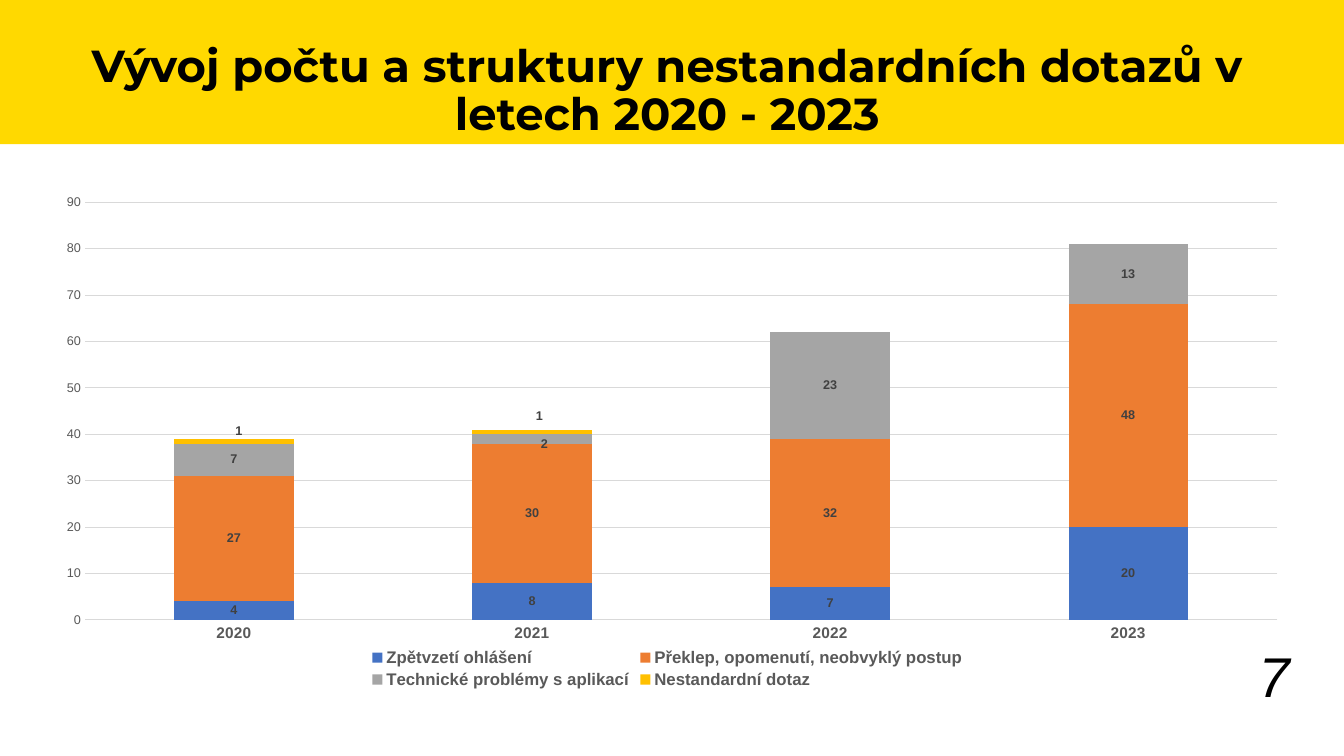
from dataclasses import dataclass

from lxml.etree import SubElement
from pptx import Presentation
from pptx.chart.data import CategoryChartData
from pptx.dml.color import RGBColor as Color
from pptx.enum.chart import XL_CHART_TYPE as ChartType
from pptx.enum.chart import XL_LEGEND_POSITION as LegendPosition
from pptx.enum.chart import XL_TICK_MARK as TickMark
from pptx.enum.shapes import MSO_SHAPE as ShapeKind
from pptx.enum.text import MSO_ANCHOR as Anchor
from pptx.enum.text import PP_ALIGN as Align
from pptx.oxml import parse_xml
from pptx.oxml.ns import nsdecls, qn
from pptx.util import Inches, Pt

WIDTH, HEIGHT = 13.33, 7.5
MARGIN = 0.46
CONTENT_WIDTH = WIDTH - 2 * MARGIN - 0.09


@dataclass(frozen=True)
class Theme:
    heading_font: str = "Montserrat"
    body_font: str = "Arial"
    black: str = "000000"
    band: str = "FFD900"
    axis_text: str = "595959"
    label_text: str = "404040"
    grid: str = "D9D9D9"
    title_size: int = 32
    number_size: int = 40
    legend_size: int = 12
    category_size: int = 11
    chart_size: int = 10
    label_size: int = 9


THEME = Theme()
YEARS = ["2020", "2021", "2022", "2023"]
QUERY_SERIES = [
    ("Zpětvzetí ohlášení", [4, 8, 7, 20], "4472C4"),
    ("Překlep, opomenutí, neobvyklý postup", [27, 30, 32, 48], "ED7D31"),
    ("Technické problémy s aplikací", [7, 2, 23, 13], "A5A5A5"),
    ("Nestandardní dotaz", [1, 1, None, None], "FFC000"),
]
# (series, year) -> label offset as shares of the chart's size
LABEL_SHIFTS = {(2, 1): (0.01, 0.01), (3, 0): (0.004, -0.02), (3, 1): (0.006, -0.03)}
PLOT_AREA = {"x": 0.031, "y": 0.033, "w": 0.96, "h": 0.824}


def style_font(font, size, color, bold=False, italic=False, name=THEME.body_font):
    font.name, font.size = name, Pt(size)
    font.bold, font.italic = bold, italic
    font.color.rgb = Color.from_string(color)


def add_band(slide, height):
    band = slide.shapes.add_shape(ShapeKind.RECTANGLE, 0, 0, Inches(WIDTH), Inches(height))
    band.shadow.inherit = False
    band.fill.solid()
    band.fill.fore_color.rgb = Color.from_string(THEME.band)
    band.line.fill.background()


def add_text(slide, box, text, anchor, align, spacing=1.0, **style):
    frame = slide.shapes.add_textbox(*map(Inches, box)).text_frame
    frame.word_wrap = True
    frame.vertical_anchor = anchor
    frame.text = text
    paragraph = frame.paragraphs[0]
    paragraph.alignment, paragraph.line_spacing = align, spacing
    style_font(paragraph.runs[0].font, color=THEME.black, **style)


def manual_layout(positions, inner=False):
    layout = parse_xml(f"<c:layout {nsdecls('c')}><c:manualLayout/></c:layout>")
    manual = layout[0]
    if inner:
        SubElement(manual, qn("c:layoutTarget")).set("val", "inner")
        for axis in "xy":
            SubElement(manual, qn(f"c:{axis}Mode")).set("val", "edge")
    for key, value in positions.items():
        SubElement(manual, qn(f"c:{key}")).set("val", str(value))
    return layout


def style_axis(axis, size, bold=False):
    axis.major_tick_mark = axis.minor_tick_mark = TickMark.NONE
    axis.format.line.fill.background()
    style_font(axis.tick_labels.font, size, THEME.axis_text, bold)


def style_series(series, color):
    series.format.fill.solid()
    series.format.fill.fore_color.rgb = Color.from_string(color)
    labels = series.data_labels
    labels.show_value = True
    style_font(labels.font, THEME.label_size, THEME.label_text, bold=True)


def shift_label(series, index, offset):
    font = series.points[index].data_label.font
    style_font(font, THEME.label_size, THEME.label_text, bold=True)
    label = series._element.xpath(f"c:dLbls/c:dLbl[c:idx/@val='{index}']")[0]
    label.insert(1, manual_layout(dict(zip("xy", offset))))


def add_query_chart(slide, box):
    data = CategoryChartData()
    data.categories = YEARS
    for name, values, _ in QUERY_SERIES:
        data.add_series(name, values)
    chart = slide.shapes.add_chart(
        ChartType.COLUMN_STACKED, *map(Inches, box), data
    ).chart
    chart.has_title = False
    style_font(chart.font, THEME.chart_size, THEME.black)

    # Axes and gridlines
    style_axis(chart.category_axis, THEME.category_size, bold=True)
    value_axis = chart.value_axis
    style_axis(value_axis, THEME.label_size)
    value_axis.minimum_scale, value_axis.maximum_scale = 0, 90
    value_axis.major_unit = 10
    grid_line = value_axis.major_gridlines.format.line
    grid_line.color.rgb = Color.from_string(THEME.grid)
    grid_line.width = Pt(0.75)

    # Legend
    chart.has_legend = True
    chart.legend.position = LegendPosition.BOTTOM
    chart.legend.include_in_layout = False
    style_font(chart.legend.font, THEME.legend_size, THEME.axis_text, bold=True)

    # Columns and their labels
    plot = chart.plots[0]
    plot.gap_width, plot.overlap, plot.vary_by_categories = 150, 100, False
    for series, (_, _, color) in zip(plot.series, QUERY_SERIES):
        style_series(series, color)
    for (row, index), offset in LABEL_SHIFTS.items():
        shift_label(plot.series[row], index, offset)

    # Plot area
    plot_area = chart._chartSpace.chart.plotArea
    for layout in plot_area.findall(qn("c:layout")):
        plot_area.remove(layout)
    plot_area.insert(0, manual_layout(PLOT_AREA, inner=True))


def main():
    presentation = Presentation()
    presentation.slide_width, presentation.slide_height = Inches(WIDTH), Inches(HEIGHT)
    slide = presentation.slides.add_slide(presentation.slide_layouts[6])

    # Heading
    add_band(slide, 1.43)
    add_text(
        slide, (MARGIN, 0.4, CONTENT_WIDTH, 1.02),
        "Vývoj počtu a struktury nestandardních dotazů v letech 2020 - 2023",
        Anchor.MIDDLE, Align.CENTER, spacing=0.9,
        size=THEME.title_size, bold=True, name=THEME.heading_font,
    )

    # Slide number and chart
    add_text(
        slide, (9.89, 6.51, 3, 0.57), "7", Anchor.BOTTOM, Align.RIGHT,
        size=THEME.number_size, italic=True,
    )
    add_query_chart(slide, (MARGIN, 1.84, CONTENT_WIDTH, 5.03))
    presentation.save("out.pptx")


if __name__ == "__main__":
    main()
